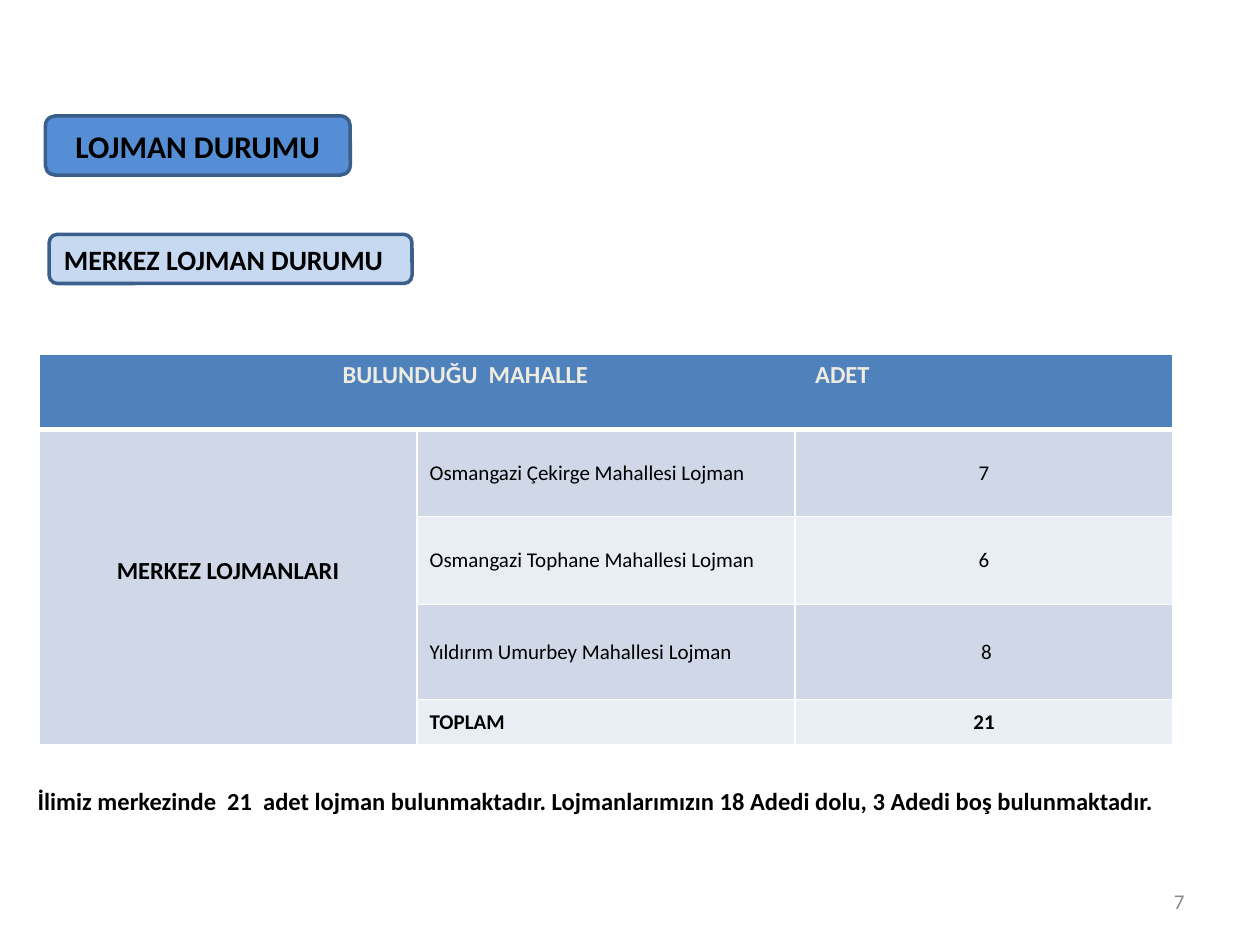
from lxml import etree
from pptx import Presentation
from pptx import util as u
from pptx.dml.color import RGBColor
from pptx.enum import shapes, text
from pptx.oxml import ns

BLACK = RGBColor(0x00, 0x00, 0x00)
WHITE = RGBColor(0xFF, 0xFF, 0xFF)
GRAY = RGBColor(0x89, 0x89, 0x89)
CREAM = RGBColor(0xEE, 0xEC, 0xE1)
HEADER_BLUE = RGBColor(0x4F, 0x81, 0xBD)
BAND_DARK = RGBColor(0xD0, 0xD8, 0xE8)
BAND_LIGHT = RGBColor(0xE9, 0xED, 0xF4)
TITLE_BLUE = RGBColor(0x55, 0x8E, 0xD5)
SUBTITLE_BLUE = RGBColor(0xC6, 0xD9, 0xF1)
OUTLINE_BLUE = RGBColor(0x3A, 0x5F, 0x8C)

LEFT, CENTER, RIGHT = text.PP_ALIGN.LEFT, text.PP_ALIGN.CENTER, text.PP_ALIGN.RIGHT
TOP, MIDDLE = text.MSO_ANCHOR.TOP, text.MSO_ANCHOR.MIDDLE


class SlideBuilder:
    """Draws styled elements on a slide with a grid of 100 columns by 75 rows."""

    font = "Calibri"
    columns, rows = 100, 75

    def __init__(self, presentation):
        self.column = presentation.slide_width / self.columns
        self.row = presentation.slide_height / self.rows
        self.slide = presentation.slides.add_slide(presentation.slide_layouts[6])

    def across(self, count):
        return u.Emu(round(count * self.column))

    def down(self, count):
        return u.Emu(round(count * self.row))

    def box(self, left, top, width, height):
        return self.across(left), self.down(top), self.across(width), self.down(height)

    def set_text(self, text_frame, words, size, bold=False, color=BLACK, align=LEFT):
        text_frame.text = words
        paragraph = text_frame.paragraphs[0]
        paragraph.alignment = align
        for run in paragraph.runs:
            run.font.name = self.font
            run.font.size = u.Pt(size)
            run.font.bold = bold
            run.font.color.rgb = color

    def label(self, box, words, size, anchor=TOP, **style):
        text_frame = self.slide.shapes.add_textbox(*self.box(*box)).text_frame
        text_frame.word_wrap = True
        text_frame.vertical_anchor = anchor
        self.set_text(text_frame, words, size, **style)

    def badge(self, box, words, size, fill, align):
        shape = self.slide.shapes.add_shape(
            shapes.MSO_SHAPE.ROUNDED_RECTANGLE, *self.box(*box))
        shape.shadow.inherit = False
        shape.fill.solid()
        shape.fill.fore_color.rgb = fill
        shape.line.color.rgb = OUTLINE_BLUE
        shape.line.width = u.Pt(2)
        shape.text_frame.vertical_anchor = MIDDLE
        self.set_text(shape.text_frame, words, size, bold=True, align=align)

    def table(self, left, top, widths, heights):
        box = self.box(left, top, sum(widths), sum(heights))
        table = self.slide.shapes.add_table(len(heights), len(widths), *box).table
        for column, width in zip(table.columns, widths):
            column.width = self.across(width)
        for row, height in zip(table.rows, heights):
            row.height = self.down(height)
        for index, row in enumerate(table.rows):
            for cell in row.cells:
                self.borders(cell, top=3 if index == 1 else 1, bottom=3 if index == 0 else 1)
                cell.fill.solid()
                cell.fill.fore_color.rgb = (
                    HEADER_BLUE if index == 0 else BAND_DARK if index % 2 else BAND_LIGHT)
        return table

    def borders(self, cell, top, bottom):
        properties = cell._tc.get_or_add_tcPr()
        for side, width in (("L", 1), ("R", 1), ("T", top), ("B", bottom)):
            line = etree.SubElement(properties, ns.qn(f"a:ln{side}"), w=str(u.Pt(width)))
            fill = etree.SubElement(line, ns.qn("a:solidFill"))
            etree.SubElement(fill, ns.qn("a:srgbClr"), val=str(WHITE))

    def cell(self, cell, words, size, anchor=MIDDLE, **style):
        cell.vertical_anchor = anchor
        self.set_text(cell.text_frame, words, size, **style)

    def tab_stops(self, paragraph, positions):
        stops = etree.SubElement(paragraph._p.get_or_add_pPr(), ns.qn("a:tabLst"))
        for position in positions:
            etree.SubElement(stops, ns.qn("a:tab"), pos=str(self.across(position)), algn="l")


def main():
    presentation = Presentation()
    presentation.slide_width, presentation.slide_height = u.Inches(10), u.Inches(7.5)
    builder = SlideBuilder(presentation)

    housing = builder.table(3.1, 28.1, [30] * 3, [6, 6.9, 7, 7.5, 3.6])
    header, group = housing.cell(0, 0), housing.cell(1, 0)
    header.merge(housing.cell(0, 2))
    group.merge(housing.cell(4, 0))
    builder.cell(header, "\tBULUNDUĞU  MAHALLE\tADET", 14, anchor=TOP, bold=True, color=CREAM)
    builder.tab_stops(header.text_frame.paragraphs[0], [23.1, 60.6])
    group.margin_bottom = builder.down(3)
    builder.cell(group, "MERKEZ LOJMANLARI", 14, bold=True, align=CENTER)

    counts = [
        ("Osmangazi Çekirge Mahallesi Lojman", "7"),
        ("Osmangazi Tophane Mahallesi Lojman", "6"),
        ("Yıldırım Umurbey Mahallesi Lojman", " 8"),
        ("TOPLAM", "21"),
    ]
    for index, (place, count) in enumerate(counts, start=1):
        is_total = index == len(counts)
        builder.cell(housing.cell(index, 1), place, 12, bold=is_total)
        builder.cell(housing.cell(index, 2), count, 12, bold=is_total, align=CENTER)

    builder.label(
        (2, 61.9, 92.1, 3.4),
        "İlimiz merkezinde  21  adet lojman bulunmaktadır. "
        "Lojmanlarımızın 18 Adedi dolu, 3 Adedi boş bulunmaktadır.",
        14, bold=True)
    builder.label((71.7, 69.5, 23.3, 4), "7", 12, anchor=MIDDLE, color=GRAY, align=RIGHT)
    builder.badge((3.6, 9.2, 24.2, 4.7), "LOJMAN DURUMU", 18, TITLE_BLUE, CENTER)
    builder.badge((3.9, 18.6, 28.8, 3.9), "MERKEZ LOJMAN DURUMU", 16, SUBTITLE_BLUE, LEFT)
    presentation.save("out.pptx")


if __name__ == "__main__":
    main()
